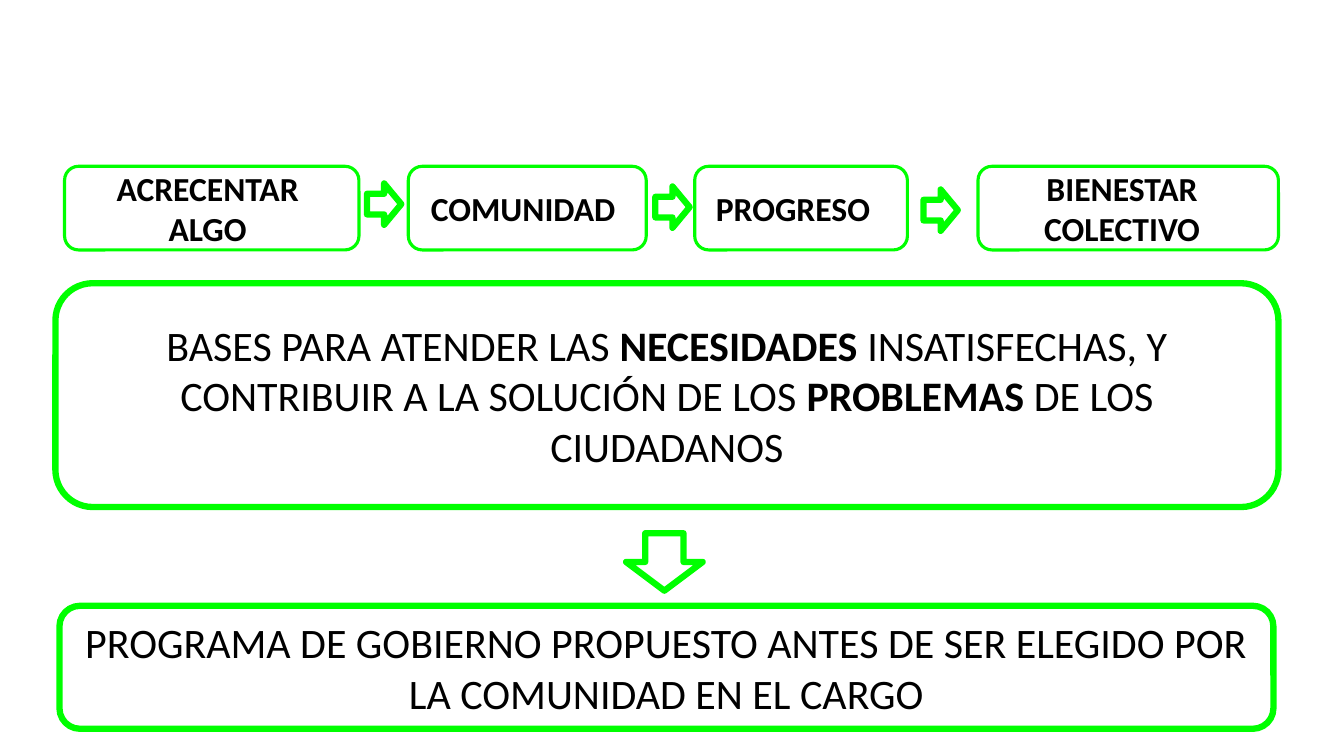
from dataclasses import dataclass

from pptx import Presentation
from pptx.dml.color import RGBColor
from pptx.enum.shapes import MSO_SHAPE
from pptx.enum.text import MSO_ANCHOR, PP_ALIGN
from pptx.util import Pt

PX = 9144  # EMU, 100 px to the inch
GREEN = RGBColor(0x00, 0xFF, 0x00)
BLACK = RGBColor(0x00, 0x00, 0x00)
FONT = "Calibri"
THIN, THICK = 2.25, 4.5
INSET = 10
STEP_TOP, STEP_HEIGHT = 165, 83
ARROW_WIDTH, ARROW_HEIGHT = 34, 41

ROUNDED = MSO_SHAPE.ROUNDED_RECTANGLE
PANEL = MSO_SHAPE.FLOWCHART_ALTERNATE_PROCESS
RIGHT_ARROW = MSO_SHAPE.RIGHT_ARROW
DOWN_ARROW = MSO_SHAPE.DOWN_ARROW
MIDDLE = MSO_ANCHOR.MIDDLE
CENTER = PP_ALIGN.CENTER


@dataclass(frozen=True)
class Step:
    text: str
    left: int
    width: int
    extra_right: int


@dataclass(frozen=True)
class Arrow:
    left: int
    top: int


@dataclass(frozen=True)
class Panel:
    left: int
    top: int
    width: int
    height: int
    runs: tuple[tuple[str, bool], ...]


STEPS = (
    Step("ACRECENTAR ALGO", 64, 292, 8),
    Step("COMUNIDAD", 405, 236, 8),
    Step("PROGRESO", 689, 211, 16),
    Step("BIENESTAR COLECTIVO", 970, 298, 12),
)
ARROWS = (Arrow(364, 182), Arrow(650, 185), Arrow(916, 188))
PANELS = (
    Panel(55, 281, 1213, 222, (
        ("BASES PARA ATENDER LAS ", False),
        ("NECESIDADES", True),
        (" INSATISFECHAS, Y CONTRIBUIR A LA SOLUCIÓN DE LOS ", False),
        ("PROBLEMAS ", True),
        ("DE LOS CIUDADANOS", False),
    )),
    Panel(59, 601, 1204, 122, (
        ("PROGRAMA DE GOBIERNO PROPUESTO ANTES DE SER ELEGIDO POR "
         "LA COMUNIDAD EN EL CARGO", False),
    )),
)


def add_outline(slide, kind: MSO_SHAPE, left: int, top: int,
                width: int, height: int, weight: float):
    sp = slide.shapes.add_shape(kind, left * PX, top * PX, width * PX, height * PX)
    sp.shadow.inherit = False
    sp.fill.background()
    sp.line.color.rgb = GREEN
    sp.line.width = Pt(weight)
    return sp


def write_runs(sp, runs: tuple[tuple[str, bool], ...], size: int,
               extra_right: int = 0) -> None:
    tf = sp.text_frame
    tf.word_wrap = True
    tf.vertical_anchor = MIDDLE
    tf.margin_right = (INSET + extra_right) * PX
    p = tf.paragraphs[0]
    p.alignment = CENTER
    for text, bold in runs:
        r = p.add_run()
        r.text = text
        r.font.name = FONT
        r.font.size = Pt(size)
        r.font.bold = bold
        r.font.color.rgb = BLACK


def main() -> None:
    prs = Presentation()
    prs.slide_width, prs.slide_height = 1333 * PX, 750 * PX
    slide = prs.slides.add_slide(prs.slide_layouts[6])

    for step in STEPS:
        sp = add_outline(slide, ROUNDED, step.left, STEP_TOP,
                         step.width, STEP_HEIGHT, THIN)
        write_runs(sp, ((step.text, True),), 24, step.extra_right)
    for arrow in ARROWS:
        add_outline(slide, RIGHT_ARROW, arrow.left, arrow.top,
                    ARROW_WIDTH, ARROW_HEIGHT, THICK)
    for panel in PANELS:
        sp = add_outline(slide, PANEL, panel.left, panel.top,
                         panel.width, panel.height, THICK)
        write_runs(sp, panel.runs, 30)
    add_outline(slide, DOWN_ARROW, 621, 529, 76, 57, THICK)

    prs.save("out.pptx")


if __name__ == "__main__":
    main()
